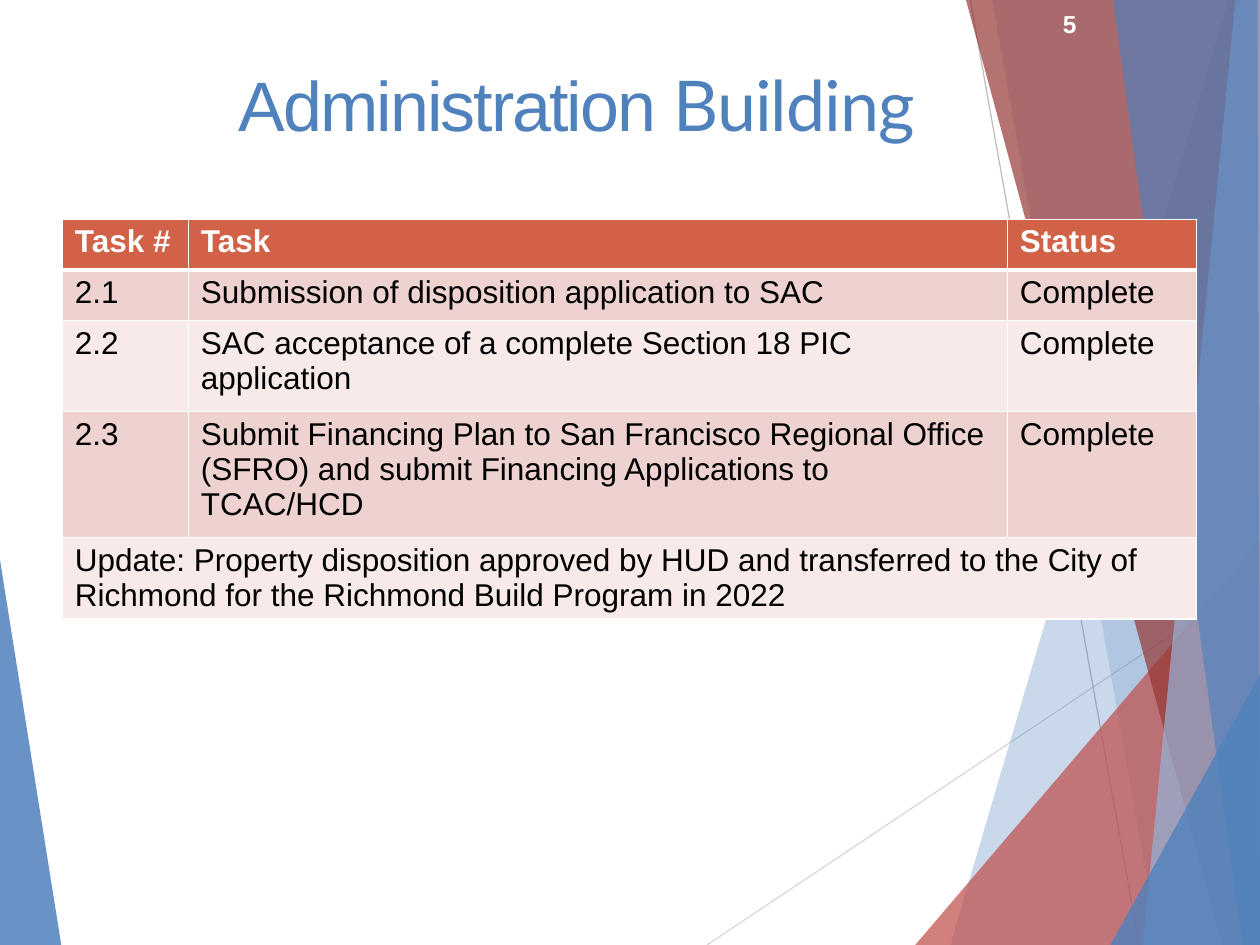
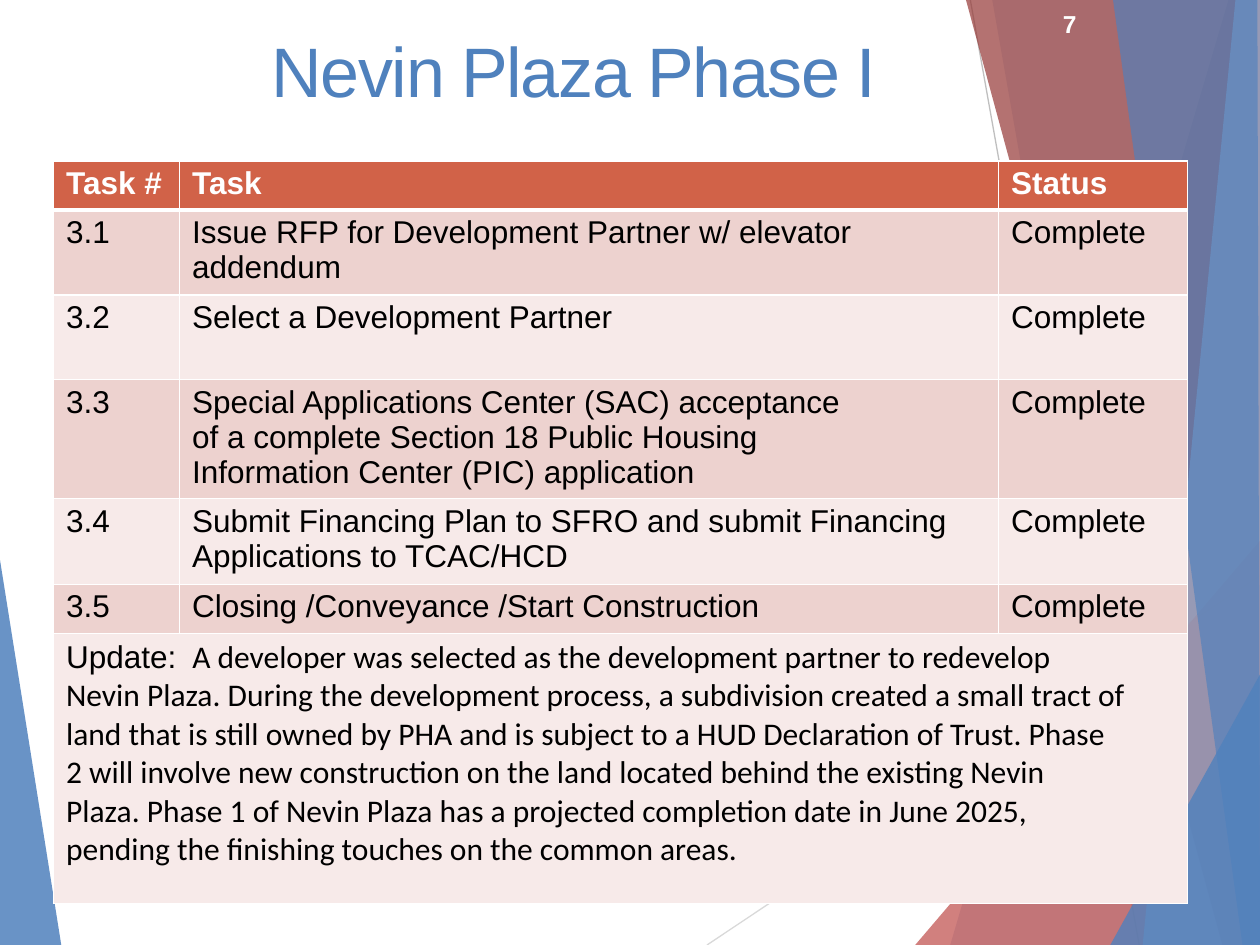
from lxml import etree
from pptx import Presentation
from pptx.dml.color import RGBColor
from pptx.enum.shapes import MSO_CONNECTOR
from pptx.enum.text import MSO_ANCHOR, MSO_AUTO_SIZE, PP_ALIGN
from pptx.oxml.ns import qn
from pptx.util import Pt

STRAIGHT = MSO_CONNECTOR.STRAIGHT
TOP = MSO_ANCHOR.TOP
NO_AUTOFIT = MSO_AUTO_SIZE.NONE
CENTER = PP_ALIGN.CENTER

WIDTH, HEIGHT = 720, 540
COLORS = {
    "blue": "4F81BD", "pale_blue": "95B3D7", "red": "C0504D", "dark_red": "953735",
    "light_gray": "D9D9D9", "gray": "BFBFBF", "white": "FFFFFF", "black": "000000",
    "header": "D16248", "odd_row": "EDD2CF", "even_row": "F7EAE9",
}
FONT = "Arial"
COLUMN_WIDTHS = (72, 468, 108)
HEADINGS = ("Task #", "Task", "Status")
DONE = "Complete"

# Facets from back to front: colour, opacity in percent, corners
FACETS = [
    ("blue", 30, [(702, 0), (543, 540), (720, 540), (720, 0)]),
    ("blue", 20, [(567, 0), (662, 540), (720, 540), (720, 0)]),
    ("red", 72, [(523, 540), (720, 309), (720, 540)]),
    ("dark_red", 70, [(552, 0), (698.5, 540), (720, 540), (720, 0)]),
    ("pale_blue", 70, [(706, 0), (653, 540), (720, 540), (720, 0)]),
    ("blue", 65, [(636, 0), (710, 540), (720, 540), (718.5, 0)]),
    ("blue", 80, [(634.5, 540), (720, 385.5), (720, 540)]),
]
LEFT_FACET = ("blue", 85, [(0, 320), (35, 540), (0, 540)])
THIN_LINES = [
    ("light_gray", (404, 540), (720, 329)),
    ("gray", (554.5, 0), (651, 540)),
]


def rgb(name):
    return RGBColor.from_string(COLORS[name])


def style_font(font, size, color, bold=False):
    font.name = FONT
    font.size = Pt(size)
    font.bold = bold
    font.color.rgb = rgb(color)


def set_margins(target, left, top, right, bottom):
    target.margin_left, target.margin_top = Pt(left), Pt(top)
    target.margin_right, target.margin_bottom = Pt(right), Pt(bottom)


def add_facet(slide, color, opacity, corners):
    points = [(Pt(x), Pt(y)) for x, y in corners]
    builder = slide.shapes.build_freeform(*points[0])
    builder.add_line_segments(points[1:], close=True)
    facet = builder.convert_to_shape()
    facet.shadow.inherit = False
    facet.fill.solid()
    facet.fill.fore_color.rgb = rgb(color)
    facet.line.fill.background()
    fill_color = facet.element.spPr.find(".//" + qn("a:srgbClr"))
    etree.SubElement(fill_color, qn("a:alpha"), val=str(opacity * 1000))
    return facet


def add_thin_line(slide, color, start, end):
    line = slide.shapes.add_connector(STRAIGHT, *(Pt(v) for v in start + end))
    line.line.color.rgb = rgb(color)
    line.line.width = Pt(0.75)
    etree.SubElement(line.element.spPr, qn("a:effectLst"))
    return line


def move_backdrop_to_layout(slide):
    """Draw the facets and lines once and let the layout carry them."""
    parts = [add_facet(slide, *LEFT_FACET)]
    parts += [add_thin_line(slide, *line) for line in THIN_LINES]
    parts += [add_facet(slide, *facet) for facet in FACETS]
    layout_tree = slide.slide_layout.element.cSld.spTree
    for part in parts:
        layout_tree.append(part.element)


def format_title(slide, box, runs):
    """Fill the title with (text, font name, letter spacing) runs."""
    title = slide.shapes.title
    title.left, title.top, title.width, title.height = (Pt(v) for v in box)
    frame = title.text_frame
    frame.auto_size = NO_AUTOFIT
    frame.vertical_anchor = TOP
    set_margins(frame, 0, 0.9, 0, 0)
    paragraph = frame.paragraphs[0]
    paragraph.alignment = CENTER
    paragraph.space_before = Pt(0.9)
    for text, font_name, spacing in runs:
        run = paragraph.add_run()
        run.text = text
        style_font(run.font, 40, "blue")
        run.font.name = font_name
        run_properties = list(title.element.iter(qn("a:rPr")))[-1]
        run_properties.set("spc", str(round(spacing * 100)))


def add_page_number(slide, number):
    box = slide.shapes.add_textbox(Pt(606.5), Pt(4.5), Pt(14), Pt(19))
    frame = box.text_frame
    frame.word_wrap = True
    set_margins(frame, 0.9, 0.9, 0, 0)
    paragraph = frame.paragraphs[0]
    paragraph.text = str(number)
    paragraph.space_before = Pt(1)
    style_font(paragraph.font, 14, "white", bold=True)


def add_borders(cell, top, bottom):
    properties = cell._tc.get_or_add_tcPr()
    sides = (("lnL", 1), ("lnR", 1), ("lnT", top), ("lnB", bottom))
    for position, (side, width) in enumerate(sides):
        border = etree.Element(qn("a:" + side), w=str(Pt(width)))
        fill = etree.SubElement(border, qn("a:solidFill"))
        etree.SubElement(fill, qn("a:srgbClr"), val=COLORS["white"])
        properties.insert(position, border)


def fill_cell(cell, row, text, right_margin=0):
    is_header = row == 0
    cell.text = text
    cell.vertical_anchor = TOP
    set_margins(cell, 7.2, 2.9, right_margin, 0)
    for index, paragraph in enumerate(cell.text_frame.paragraphs):
        paragraph.space_before = Pt(0 if index else 3.1)
        style_font(paragraph.font, 18, "white" if is_header else "black", is_header)
    add_borders(cell, top=3 if row == 1 else 1, bottom=3 if is_header else 1)
    cell.fill.solid()
    cell.fill.fore_color.rgb = rgb(
        "header" if is_header else "odd_row" if row % 2 else "even_row")


def add_task_table(slide, left, top, heights, tasks, update, update_margin=0):
    """Place headings, (number, task, right margin) rows and a merged update row."""
    frame = slide.shapes.add_table(
        len(heights), len(COLUMN_WIDTHS), Pt(left), Pt(top),
        Pt(sum(COLUMN_WIDTHS)), Pt(sum(heights)))
    table = frame.table
    table.horz_banding = False
    for column, width in zip(table.columns, COLUMN_WIDTHS):
        column.width = Pt(width)
    for row, height in zip(table.rows, heights):
        row.height = Pt(height)

    for column, heading in enumerate(HEADINGS):
        fill_cell(table.cell(0, column), 0, heading)
    for row, (number, task, right_margin) in enumerate(tasks, start=1):
        fill_cell(table.cell(row, 0), row, number)
        fill_cell(table.cell(row, 1), row, task, right_margin)
        fill_cell(table.cell(row, 2), row, DONE)

    # Update row across all columns
    last = len(heights) - 1
    update_cell = table.cell(last, 0)
    update_cell.merge(table.cell(last, len(COLUMN_WIDTHS) - 1))
    fill_cell(update_cell, last, update, update_margin)
    return update_cell


def build_administration_slide(slide):
    format_title(slide, (119, 34.5, 421, 50),
                 [("Administration ", FONT, -1.1), ("Building", "Lato", -0.6)])
    tasks = [
        ("2.1", "Submission of disposition application to SAC", 0),
        ("2.2", "SAC acceptance of a complete Section 18 PIC\napplication", 0),
        ("2.3", "Submit Financing Plan to San Francisco Regional Office (SFRO) "
                "and submit Financing Applications to TCAC/HCD", 8),
    ]
    add_task_table(
        slide, 35.6, 125.3, (29, 29, 52, 72, 46.5), tasks,
        "Update: Property disposition approved by HUD and transferred to the City of "
        "Richmond for the Richmond Build Program in 2022")
    add_page_number(slide, 5)


def build_nevin_slide(slide):
    format_title(slide, (74, 15, 508, 50), [("Nevin Plaza Phase I", FONT, -0.8)])
    tasks = [
        ("3.1", "Issue RFP for Development Partner w/ elevator addendum", 0),
        ("3.2", "Select a Development Partner", 0),
        ("3.3", "Special Applications Center (SAC) acceptance of a complete Section 18 "
                "Public Housing Information Center (PIC) application", 82),
        ("3.4", "Submit Financing Plan to SFRO and submit Financing "
                "Applications to TCAC/HCD", 0),
        ("3.5", "Closing /Conveyance /Start Construction", 0),
    ]
    update_cell = add_task_table(
        slide, 30.6, 92, (28, 48.5, 48.5, 68, 49, 28, 154.5), tasks, "Update: ", 35.2)
    # The news itself is set in a second typeface
    news = update_cell.text_frame.paragraphs[0].add_run()
    news.text = (
        " A developer was selected as the development partner to redevelop Nevin Plaza. "
        "During the development process, a subdivision created a small tract of land that "
        "is still owned by PHA and is subject to a HUD Declaration of Trust. Phase 2 will "
        "involve new construction on the land located behind the existing Nevin Plaza. "
        "Phase 1 of Nevin Plaza has a projected completion date in June 2025, pending the "
        "finishing touches on the common areas.")
    news.font.name = "Calibri"
    add_page_number(slide, 7)


def main():
    presentation = Presentation()
    presentation.slide_width, presentation.slide_height = Pt(WIDTH), Pt(HEIGHT)
    title_only = presentation.slide_layouts[5]
    slides = [presentation.slides.add_slide(title_only) for _ in range(2)]
    move_backdrop_to_layout(slides[0])
    build_administration_slide(slides[0])
    build_nevin_slide(slides[1])
    presentation.save("out.pptx")


if __name__ == "__main__":
    main()
